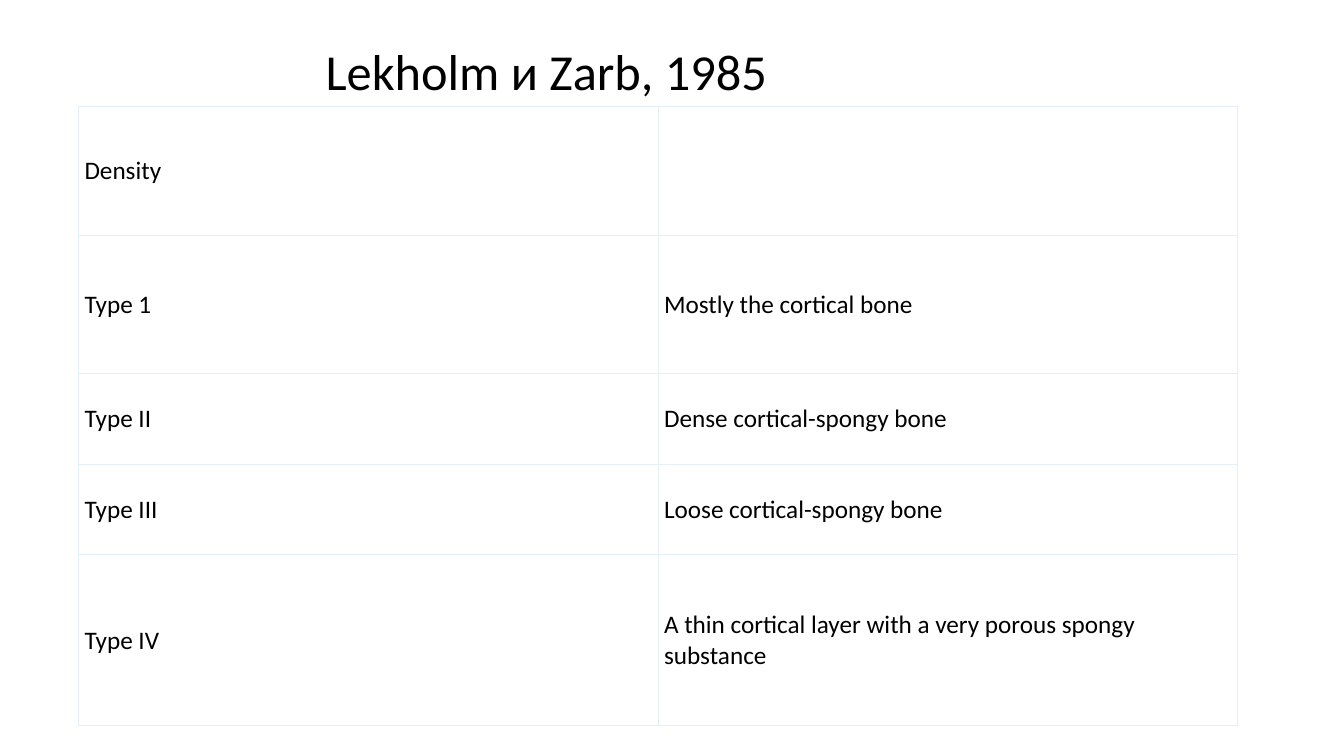
from lxml.etree import SubElement as Sub
from pptx import Presentation
from pptx.dml.color import RGBColor
from pptx.enum.text import MSO_ANCHOR as Anchor, MSO_AUTO_SIZE as Fit, PP_ALIGN as Align
from pptx.oxml.ns import qn
from pptx.util import Cm, Pt

BLACK = RGBColor(0x00, 0x00, 0x00)
WHITE = RGBColor(0xFF, 0xFF, 0xFF)
PALE = RGBColor(0xE5, 0xEF, 0xF8)

BONES = [
    ("Density", "", 3.25),
    ("Type 1", "Mostly the cortical bone", 3.48),
    ("Type II", "Dense cortical-spongy bone", 2.29),
    ("Type III", "Loose cortical-spongy bone", 2.29),
    ("Type IV", "A thin cortical layer with a very porous spongy substance", 4.3),
]


class Deck:
    font = "Calibri"

    def __init__(self, wide, high):
        self.prs = Presentation()
        self.prs.slide_width, self.prs.slide_height = Cm(wide), Cm(high)
        self.slide = self.prs.slides.add_slide(self.prs.slide_layouts[5])

    def style(self, frame, size):
        for para in frame.paragraphs:
            para.alignment = Align.LEFT
            for run in para.runs:
                run.font.name = self.font
                run.font.size = Pt(size)
                run.font.color.rgb = BLACK

    def title(self, text, left, top, wide, high):
        shape = self.slide.shapes.title
        shape.left, shape.top = Cm(left), Cm(top)
        shape.width, shape.height = Cm(wide), Cm(high)
        frame = shape.text_frame
        frame.text = text
        frame.word_wrap = False
        frame.auto_size = Fit.NONE
        frame.vertical_anchor = Anchor.MIDDLE
        self.style(frame, 36)

    def border(self, cell):
        props = cell._tc.get_or_add_tcPr()
        for side in ("lnL", "lnR", "lnT", "lnB"):
            line = Sub(props, qn("a:" + side), w=str(Pt(0.6)))
            fill = Sub(line, qn("a:solidFill"))
            Sub(fill, qn("a:srgbClr"), val=str(PALE))

    def cell(self, cell, text):
        cell.margin_left = cell.margin_right = Cm(0.15)
        cell.margin_top, cell.margin_bottom = Cm(0.08), Cm(0.05)
        cell.vertical_anchor = Anchor.MIDDLE
        self.border(cell)
        cell.fill.solid()
        cell.fill.fore_color.rgb = WHITE
        cell.text_frame.text = text
        self.style(cell.text_frame, 18)

    def table(self, rows, left, top, wide):
        high = sum(row[-1] for row in rows)
        grid = self.slide.shapes.add_table(
            len(rows), 2, Cm(left), Cm(top), Cm(wide), Cm(high)).table
        grid.first_row = grid.horz_banding = False
        for r, (*texts, tall) in enumerate(rows):
            grid.rows[r].height = Cm(tall)
            for c, text in enumerate(texts):
                self.cell(grid.cell(r, c), text)


def main():
    deck = Deck(33.87, 19.05)
    deck.table(BONES, 1.98, 2.67, 29.21)
    deck.title("Lekholm и Zarb, 1985", 7.95, 0.86, 11.94, 1.8)
    deck.prs.save("out.pptx")


if __name__ == "__main__":
    main()
